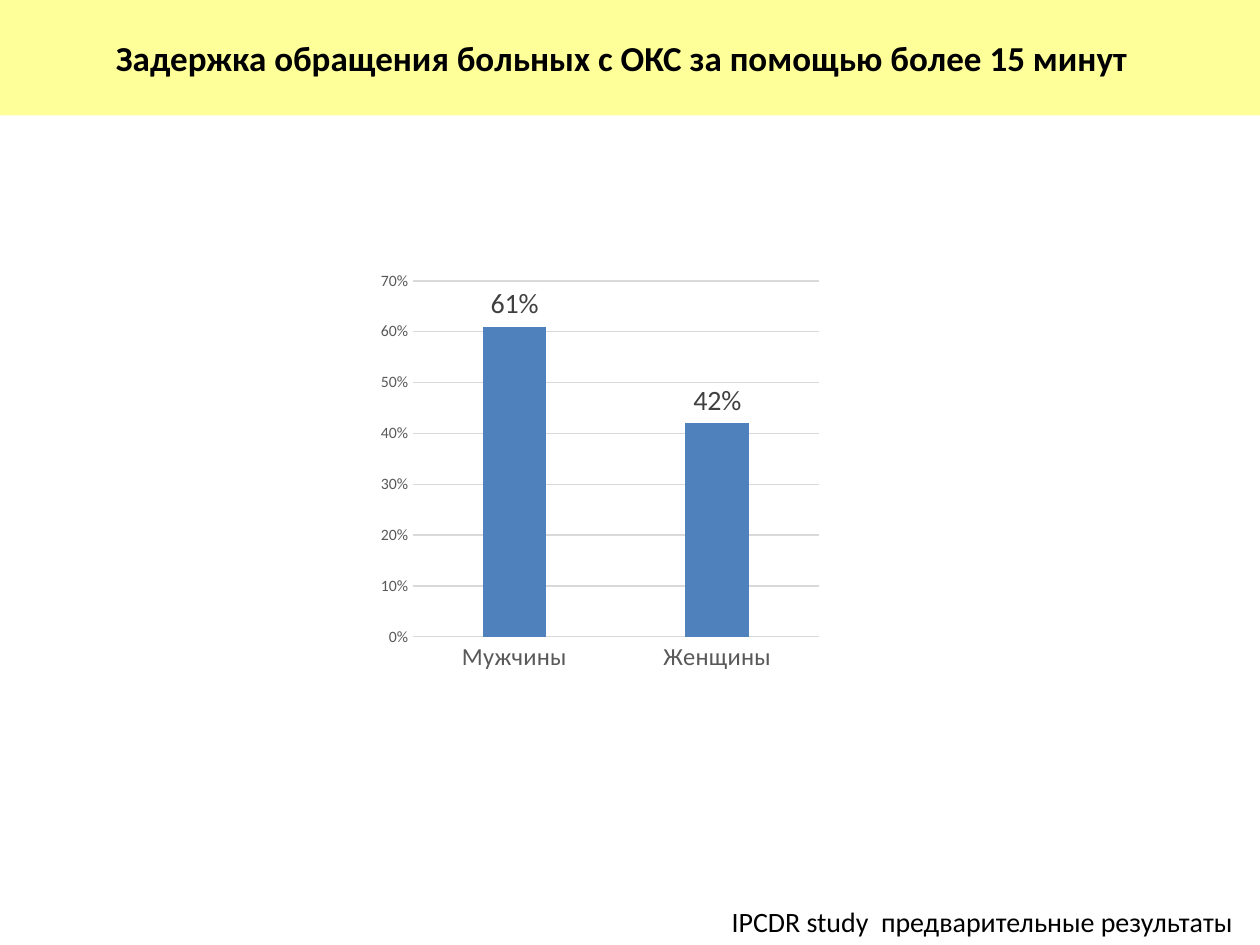
"""Slide on delayed calls for help among men and women with acute coronary syndrome."""
from pptx import Presentation
from pptx.chart import data
from pptx.dml import color
from pptx.enum import chart as charts, shapes, text
from pptx.util import Pt

COLORS = {"banner": "FFFF99", "text": "000000", "bar": "4F81BD",
          "grid": "D9D9D9", "axis": "595959", "label": "404040"}


def rgb(name):
    return color.RGBColor.from_string(COLORS[name])


def set_font(font, size, name, bold=False):
    font.name = "Calibri"
    font.size = Pt(size)
    font.bold = bold
    font.color.rgb = rgb(name)


deck = Presentation()
deck.slide_width, deck.slide_height = Pt(720), Pt(540)
page = deck.slides.add_slide(deck.slide_layouts[6])

footer = page.shapes.add_textbox(Pt(411), Pt(513.4), Pt(304.6), Pt(26.6))
footer.text_frame.word_wrap = False
footer.text_frame.auto_size = text.MSO_AUTO_SIZE.SHAPE_TO_FIT_TEXT
para = footer.text_frame.paragraphs[0]
para.text = "IPCDR study  предварительные результаты"
set_font(para.font, 16, "text")

banner = page.shapes.add_shape(shapes.MSO_SHAPE.RECTANGLE, 0, 0, Pt(720), Pt(66))
banner.shadow.inherit = False
banner.fill.solid()
banner.fill.fore_color.rgb = rgb("banner")
banner.line.fill.background()
frame = banner.text_frame
frame.word_wrap = True
frame.vertical_anchor = text.MSO_ANCHOR.MIDDLE
frame.margin_right = Pt(16.4)
para = frame.paragraphs[0]
para.text = "Задержка обращения больных с ОКС за помощью более 15 минут"
para.alignment = text.PP_ALIGN.CENTER
set_font(para.font, 20, "text", bold=True)

delays = data.CategoryChartData(number_format="0%")
delays.categories = ["Мужчины", "Женщины"]
delays.add_series("Series 1", [0.61, 0.42])
chart = page.shapes.add_chart(charts.XL_CHART_TYPE.COLUMN_CLUSTERED, Pt(212.4),
                              Pt(150.5), Pt(260.6), Pt(238.3), delays).chart
set_font(chart.font, 10, "text")
chart.has_legend = False
chart.has_title = False

plot = chart.plots[0]
plot.vary_by_categories = False
plot.gap_width = 219
plot.overlap = -27
bars = plot.series[0]
bars.format.fill.solid()
bars.format.fill.fore_color.rgb = rgb("bar")

labels = bars.data_labels
labels.show_value = True
labels.number_format = "0%"
labels.number_format_is_linked = False
labels.position = charts.XL_LABEL_POSITION.OUTSIDE_END
set_font(labels.font, 16, "label")

for axis, size in ((chart.category_axis, 14), (chart.value_axis, 9)):
    axis.major_tick_mark = charts.XL_TICK_MARK.NONE
    axis.minor_tick_mark = charts.XL_TICK_MARK.NONE
    set_font(axis.tick_labels.font, size, "axis")

values = chart.value_axis
values.minimum_scale, values.maximum_scale, values.major_unit = 0, 0.7, 0.1
values.tick_labels.number_format = "0%"
values.tick_labels.number_format_is_linked = False
values.format.line.fill.background()
for line in (chart.category_axis.format.line, values.major_gridlines.format.line):
    line.color.rgb = rgb("grid")
    line.width = Pt(0.75)

deck.save("out.pptx")
